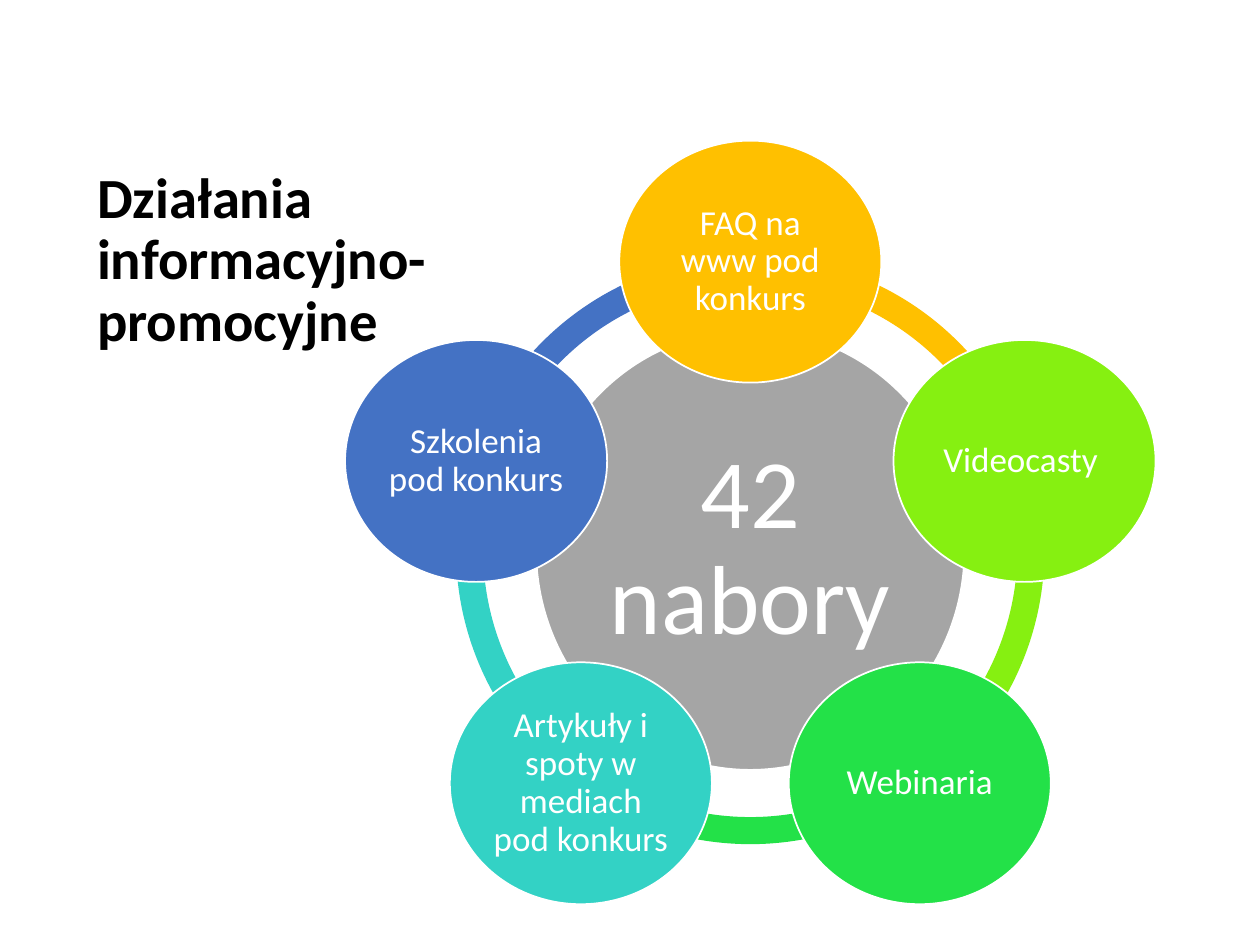
import math

import pptx
import pptx.util
from pptx.dml.color import RGBColor
from pptx.enum.shapes import MSO_SHAPE
from pptx.enum.text import MSO_ANCHOR, MSO_AUTO_SIZE, PP_ALIGN
from pptx.util import Inches

FONT = "Calibri"
BLACK = RGBColor(0x00, 0x00, 0x00)
WHITE = RGBColor(0xFF, 0xFF, 0xFF)
GRAY = RGBColor(0xA5, 0xA5, 0xA5)
AMBER = RGBColor(0xFF, 0xC0, 0x00)
LIME = RGBColor(0x86, 0xF0, 0x11)
GREEN = RGBColor(0x23, 0xE1, 0x48)
TEAL = RGBColor(0x33, 0xD2, 0xC5)
BLUE = RGBColor(0x44, 0x72, 0xC4)

# Clockwise from the top
ACTIVITIES = [
    ("FAQ na www pod konkurs", AMBER),
    ("Videocasty ", LIME),
    ("Webinaria", GREEN),
    ("Artykuły i spoty w mediach pod konkurs", TEAL),
    ("Szkolenia pod konkurs", BLUE),
]
RING_THICKNESS = 0.046
ORBIT_RATIO = 0.49  # orbit radius of the activities / ring diameter
ADJUST_PER_DEGREE = 0.6  # 60000 units a degree, in hundred thousands


def write_text(frame, text, size, color, bold, align):
    frame.word_wrap = True
    frame.auto_size = MSO_AUTO_SIZE.NONE
    frame.vertical_anchor = MSO_ANCHOR.MIDDLE
    para = frame.paragraphs[0]
    para.alignment = align
    para.line_spacing = 0.9
    span = para.add_run()
    span.text = text
    span.font.name = FONT
    span.font.size = pptx.util.Pt(size)
    span.font.bold = bold
    span.font.color.rgb = color


def add_title(page, left, top, width, height):
    title = page.shapes.title
    title.left, title.top, title.width, title.height = left, top, width, height
    write_text(title.text_frame, "Działania informacyjno-promocyjne",
               32.4, BLACK, True, PP_ALIGN.LEFT)


def add_arc(shapes, left, top, size, start, end, color):
    """Draw a ring segment clockwise between two angles in degrees."""
    arc = shapes.add_shape(MSO_SHAPE.BLOCK_ARC, left, top, size, size)
    arc.shadow.inherit = False
    arc.adjustments[0] = start % 360 * ADJUST_PER_DEGREE
    arc.adjustments[1] = end % 360 * ADJUST_PER_DEGREE
    arc.adjustments[2] = RING_THICKNESS
    arc.fill.solid()
    arc.fill.fore_color.rgb = color
    arc.line.fill.background()


def add_disc(shapes, center_x, center_y, width, height, text, size, color, inset):
    disc = shapes.add_shape(MSO_SHAPE.OVAL, int(center_x - width / 2),
                            int(center_y - height / 2), width, height)
    disc.shadow.inherit = False
    disc.fill.solid()
    disc.fill.fore_color.rgb = color
    disc.line.color.rgb = WHITE
    disc.line.width = pptx.util.Pt(1)
    frame = disc.text_frame
    frame.margin_left = frame.margin_right = inset
    frame.margin_top = frame.margin_bottom = inset
    write_text(frame, text, size, WHITE, False, PP_ALIGN.CENTER)


def add_cycle(page, left, top, size):
    """Place the ring, its hub and the activities in a square box."""
    shapes = page.shapes.add_group_shape().shapes
    center_x, center_y = left + size / 2, top + size / 2
    step = 360 / len(ACTIVITIES)
    angles = [-90 + step * index for index in range(len(ACTIVITIES))]

    for angle, (_, color) in zip(angles, ACTIVITIES):
        add_arc(shapes, left, top, size, angle, angle + step, color)

    add_disc(shapes, center_x, center_y, Inches(3.4), Inches(3.49),
             "42 nabory", 56, GRAY, Inches(0.08))

    orbit = size * ORBIT_RATIO
    for angle, (text, color) in zip(angles, ACTIVITIES):
        turn = math.radians(angle)
        add_disc(shapes, center_x + orbit * math.cos(turn),
                 center_y + orbit * math.sin(turn),
                 Inches(2.08), Inches(1.92), text, 20, color, Inches(0.03))


def main():
    deck = pptx.Presentation()
    deck.slide_width, deck.slide_height = Inches(10), Inches(7.5)
    page = deck.slides.add_slide(deck.slide_layouts.get_by_name("Title Only"))
    add_title(page, Inches(0.67), Inches(1.27), Inches(3.86), Inches(1.61))
    add_cycle(page, Inches(3.62), Inches(2.03), Inches(4.67))
    deck.save("out.pptx")


if __name__ == "__main__":
    main()
